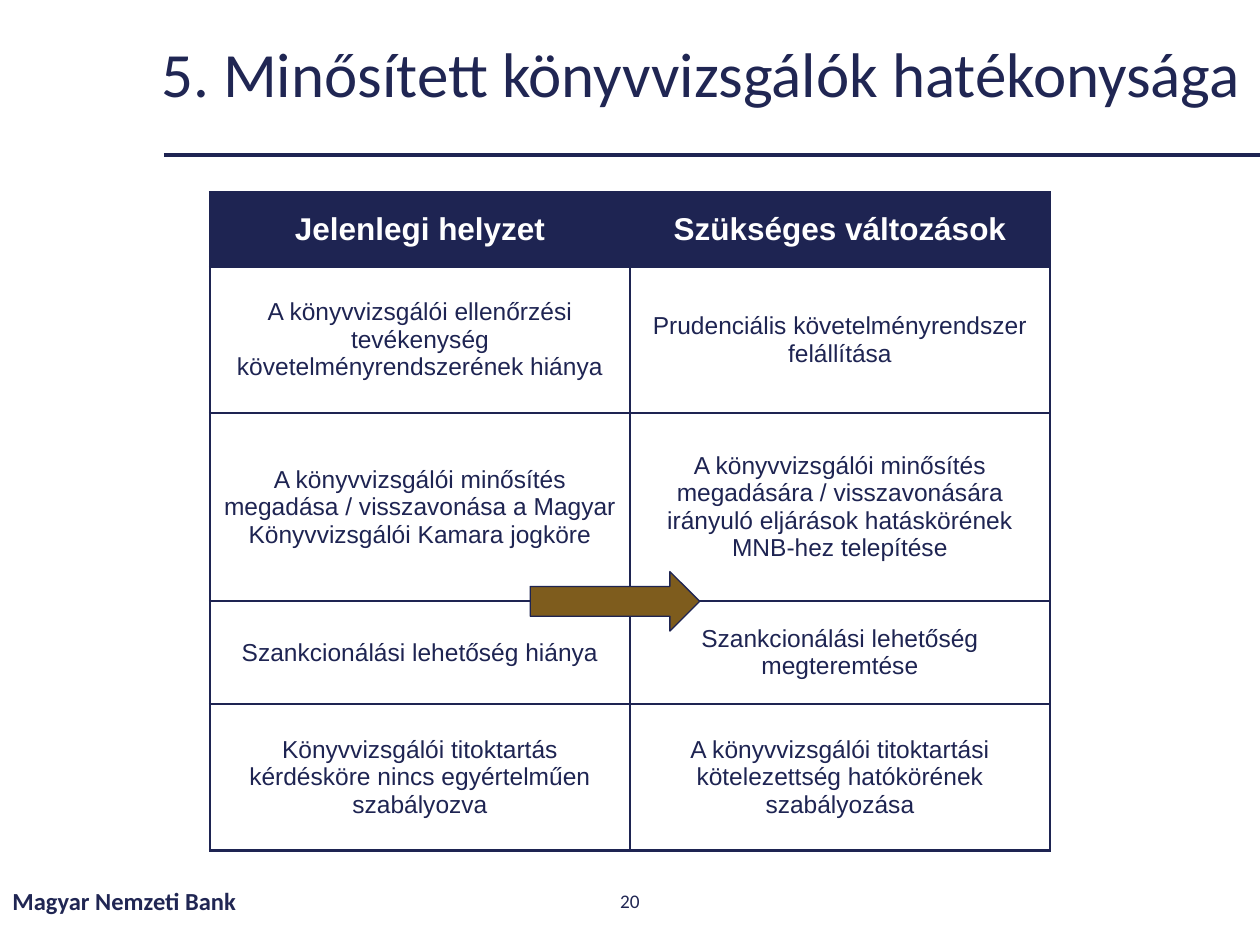
from dataclasses import dataclass

from lxml import etree
from pptx import Presentation
from pptx.dml.color import RGBColor
from pptx.enum.shapes import MSO_CONNECTOR, MSO_SHAPE
from pptx.enum.text import MSO_ANCHOR, PP_ALIGN
from pptx.oxml.ns import qn
from pptx.util import Pt

STRAIGHT = MSO_CONNECTOR.STRAIGHT
RIGHT_ARROW = MSO_SHAPE.RIGHT_ARROW
MIDDLE = MSO_ANCHOR.MIDDLE
LEFT, CENTER = PP_ALIGN.LEFT, PP_ALIGN.CENTER


@dataclass(frozen=True)
class Theme:
    navy: str = "1E2452"
    heading: str = "202653"
    white: str = "FFFFFF"
    bronze: str = "7E5C1D"
    slide_font: str = "Calibri"
    table_font: str = "Arial"
    title_size: float = 36
    header_size: float = 18
    body_size: float = 14
    footer_size: float = 14
    number_size: float = 11
    border: float = 1.5


THEME = Theme()

COMPARISON = [
    ("Jelenlegi helyzet", "Szükséges változások"),
    ("A könyvvizsgálói ellenőrzési tevékenység követelményrendszerének hiánya",
     "Prudenciális követelményrendszer felállítása"),
    ("A könyvvizsgálói minősítés megadása / visszavonása a Magyar "
     "Könyvvizsgálói Kamara jogköre",
     "A könyvvizsgálói minősítés megadására / visszavonására irányuló "
     "eljárások hatáskörének MNB-hez telepítése"),
    ("Szankcionálási lehetőség hiánya",
     "Szankcionálási lehetőség megteremtése"),
    ("Könyvvizsgálói titoktartás kérdésköre nincs egyértelműen szabályozva",
     "A könyvvizsgálói titoktartási kötelezettség hatókörének szabályozása"),
]
ROW_HEIGHTS = (42.5, 83.5, 107.5, 59, 83.5)
COLUMN_WIDTH = 240


def rgb(color):
    return RGBColor.from_string(color)


def style_text(frame, font, size, color, bold=False, align=LEFT):
    paragraph = frame.paragraphs[0]
    paragraph.alignment = align
    for run in paragraph.runs:
        run.font.name = font
        run.font.size = Pt(size)
        run.font.bold = bold
        run.font.color.rgb = rgb(color)


def add_label(slide, text, left, top, width, height, size, **style):
    label = slide.shapes.add_textbox(Pt(left), Pt(top), Pt(width), Pt(height))
    frame = label.text_frame
    frame.word_wrap = True
    frame.vertical_anchor = MIDDLE
    frame.text = text
    style_text(frame, THEME.slide_font, size, THEME.heading, **style)
    return frame


def add_rule(slide, left, right, y):
    rule = slide.shapes.add_connector(STRAIGHT, Pt(left), Pt(y), Pt(right), Pt(y))
    rule.line.color.rgb = rgb(THEME.navy)
    rule.line.width = Pt(2.25)
    etree.SubElement(rule._element.spPr, qn("a:effectLst"))


def add_borders(cell):
    properties = cell._tc.get_or_add_tcPr()
    for side in ("a:lnL", "a:lnR", "a:lnT", "a:lnB"):
        edge = etree.SubElement(properties, qn(side), w=str(Pt(THEME.border)))
        fill = etree.SubElement(edge, qn("a:solidFill"))
        etree.SubElement(fill, qn("a:srgbClr"), val=THEME.navy)


def fill_cell(cell, text, is_header):
    cell.text = text
    cell.vertical_anchor = MIDDLE
    add_borders(cell)
    if is_header:
        cell.fill.solid()
        cell.fill.fore_color.rgb = rgb(THEME.navy)
        size, color = THEME.header_size, THEME.white
    else:
        cell.fill.background()
        size, color = THEME.body_size, THEME.navy
    style_text(cell.text_frame, THEME.table_font, size, color,
               bold=is_header, align=CENTER)


def add_comparison(slide, left, top):
    columns = len(COMPARISON[0])
    table = slide.shapes.add_table(
        len(COMPARISON), columns, Pt(left), Pt(top),
        Pt(columns * COLUMN_WIDTH), Pt(sum(ROW_HEIGHTS))).table
    table.horz_banding = False
    for column in table.columns:
        column.width = Pt(COLUMN_WIDTH)
    for r, (height, texts) in enumerate(zip(ROW_HEIGHTS, COMPARISON)):
        table.rows[r].height = Pt(height)
        for c, text in enumerate(texts):
            fill_cell(table.cell(r, c), text, is_header=r == 0)


def add_change_arrow(slide, left, top, width, height):
    arrow = slide.shapes.add_shape(
        RIGHT_ARROW, Pt(left), Pt(top), Pt(width), Pt(height))
    arrow.shadow.inherit = False
    arrow.fill.solid()
    arrow.fill.fore_color.rgb = rgb(THEME.bronze)
    arrow.line.color.rgb = rgb(THEME.navy)
    arrow.line.width = Pt(0.75)


def main():
    deck = Presentation()
    deck.slide_width, deck.slide_height = Pt(720), Pt(540)
    slide = deck.slides.add_slide(deck.slide_layouts[6])

    # Heading
    add_rule(slide, 93.6, 720, 88.4)
    title = add_label(slide, "5. Minősített könyvvizsgálók hatékonysága",
                      85, 14.4, 635, 59.8, THEME.title_size)
    title.paragraphs[0].line_spacing = 0.9

    # Footer
    add_label(slide, "Magyar Nemzeti Bank", 0, 500.4, 243.4, 28.8,
              THEME.footer_size, bold=True)
    add_label(slide, "20", 279, 500.4, 162, 28.8,
              THEME.number_size, align=CENTER)

    # Present state against needed changes
    add_comparison(slide, 120, 110)
    add_change_arrow(slide, 303, 326.6, 96.8, 34)

    deck.save("out.pptx")


if __name__ == "__main__":
    main()
